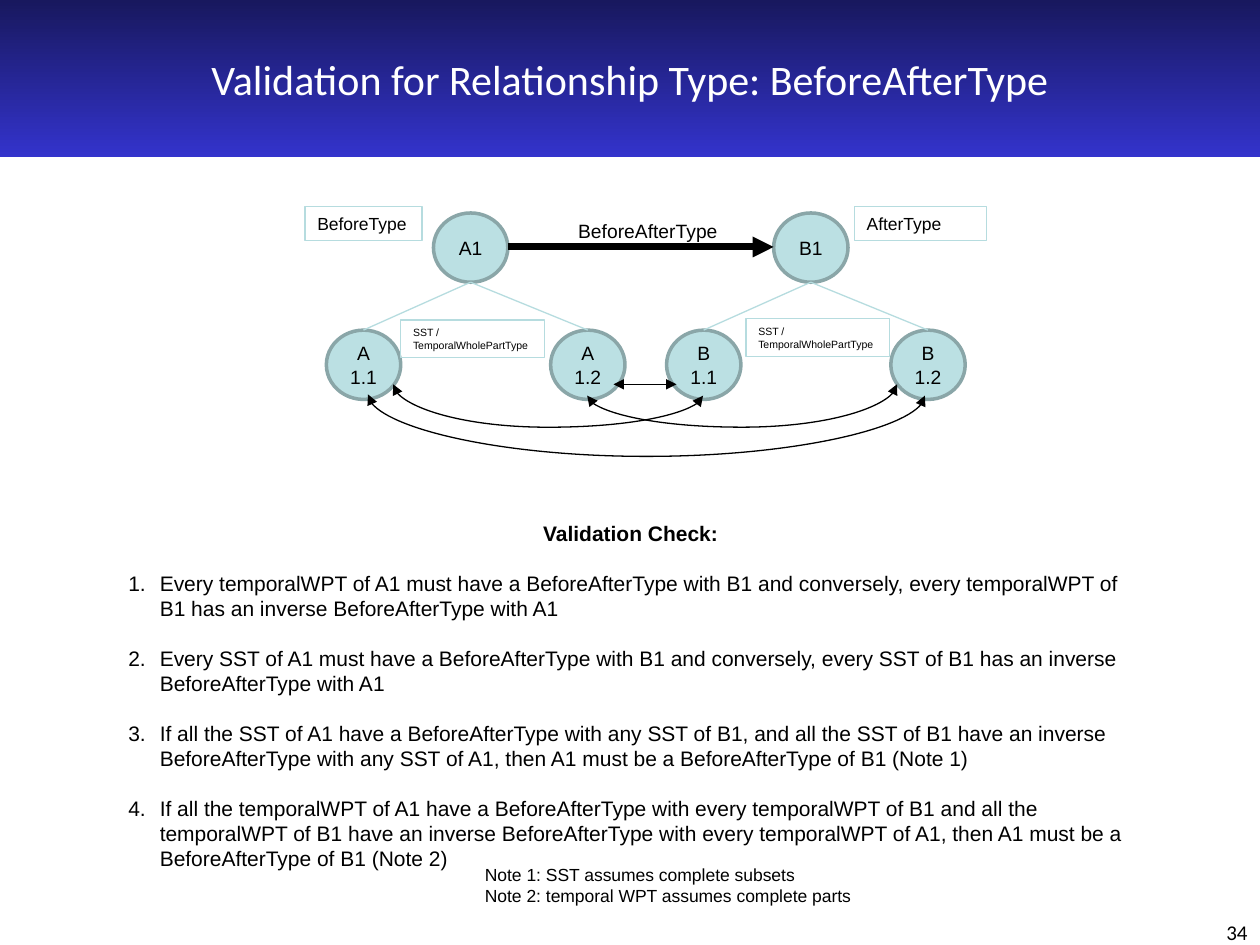
from dataclasses import dataclass

from lxml.etree import SubElement
from pptx import Presentation
from pptx.dml.color import RGBColor
from pptx.enum.shapes import MSO_CONNECTOR, MSO_SHAPE
from pptx.enum.text import MSO_ANCHOR, MSO_AUTO_SIZE, PP_ALIGN
from pptx.oxml.ns import qn
from pptx.util import Emu, Pt

PX = 9144  # 100 px to the inch
NODE_W, NODE_H = 59, 55


@dataclass(frozen=True)
class Theme:
    white: str = "FFFFFF"
    ink: str = "000000"
    band_top: str = "18185E"
    band_bottom: str = "3333CC"
    node: str = "BBE0E3"
    node_line: str = "8AA6A8"
    pale_line: str = "B6DCDF"
    heading_font: str = "Calibri"
    body_font: str = "Arial"
    title: int = 24
    body: int = 12
    node_text: int = 11
    note: int = 10
    tiny: int = 6


def px(value):
    return Emu(round(value * PX))


def rgb(value):
    return RGBColor.from_string(value)


def write(tf, lines, *, size, color, font, bold=False, align=PP_ALIGN.LEFT,
          anchor=MSO_ANCHOR.TOP, wrap=True, inset=None):
    """Fill a text frame with one paragraph per line and return the paragraphs."""
    tf.word_wrap = wrap
    tf.auto_size = MSO_AUTO_SIZE.NONE
    tf.vertical_anchor = anchor
    if inset is not None:
        tf.margin_left = tf.margin_right = tf.margin_top = tf.margin_bottom = px(inset)
    for i, line in enumerate(lines):
        p = tf.paragraphs[0] if i == 0 else tf.add_paragraph()
        p.alignment = align
        r = p.add_run()
        r.text = line
        r.font.size, r.font.name, r.font.bold = Pt(size), font, bold
        r.font.color.rgb = rgb(color)
    return tf.paragraphs


def number(p, indent):
    pPr = p._p.get_or_add_pPr()
    pPr.set("marL", str(px(indent)))
    pPr.set("indent", str(-px(indent)))
    SubElement(pPr, qn("a:buFont"), typeface="+mj-lt")
    SubElement(pPr, qn("a:buAutoNum"), type="arabicPeriod")


class Deck:
    def __init__(self, theme, width, height):
        self.theme = theme
        self.prs = Presentation()
        self.prs.slide_width, self.prs.slide_height = px(width), px(height)
        self.s = None

    def new_slide(self):
        self.s = self.prs.slides.add_slide(self.prs.slide_layouts[5])

    def title(self, text, x, y, w, h):
        t, sp = self.theme, self.s.shapes.title
        sp.left, sp.top, sp.width, sp.height = map(px, (x, y, w, h))
        sp.fill.gradient()
        sp.fill.gradient_angle = 270
        for stop, color in zip(sp.fill.gradient_stops, (t.band_top, t.band_bottom)):
            stop.color.rgb = rgb(color)
        write(sp.text_frame, [text], size=t.title, color=t.white, font=t.heading_font,
              align=PP_ALIGN.CENTER, anchor=MSO_ANCHOR.MIDDLE)

    def text(self, lines, x, y, w, h, **fmt):
        fmt = {"color": self.theme.ink, "font": self.theme.body_font, **fmt}
        sp = self.s.shapes.add_textbox(*map(px, (x, y, w, h)))
        return write(sp.text_frame, lines, **fmt)

    def shape(self, kind, lines, x, y, w, h, fill, line, weight, **fmt):
        sp = self.s.shapes.add_shape(kind, *map(px, (x, y, w, h)))
        sp.shadow.inherit = False
        if fill:
            sp.fill.solid()
            sp.fill.fore_color.rgb = rgb(fill)
        else:
            sp.fill.background()
        sp.line.color.rgb, sp.line.width = rgb(line), Pt(weight)
        write(sp.text_frame, lines, color=self.theme.ink, font=self.theme.body_font, **fmt)
        return sp

    def node(self, lines, x, y):
        t = self.theme
        return self.shape(MSO_SHAPE.OVAL, lines, x, y, NODE_W, NODE_H, t.node, t.node_line, 2,
                          size=t.node_text, align=PP_ALIGN.CENTER,
                          anchor=MSO_ANCHOR.MIDDLE, inset=0)

    def label(self, lines, x, y, w, h, size):
        self.shape(MSO_SHAPE.RECTANGLE, lines, x, y, w, h, None,
                   self.theme.pale_line, 0.75, size=size)

    def line(self, start, end, color, weight=0.75, head=False, tail=False,
             kind=MSO_CONNECTOR.STRAIGHT):
        cx = self.s.shapes.add_connector(kind, *map(px, (*start, *end)))
        cx.line.color.rgb, cx.line.width = rgb(color), Pt(weight)
        ln = cx.line._get_or_add_ln()
        for tag, wanted in (("a:headEnd", head), ("a:tailEnd", tail)):
            if wanted:
                SubElement(ln, qn(tag), type="triangle")
        SubElement(cx._element.spPr, qn("a:effectLst"))
        return cx

    def curve(self, start, end, dip):
        """Draw a two-headed curve from left to right that hangs down to y = dip."""
        (x1, y1), (x2, y2) = start, end
        mid_x, mid_y = (x1 + x2) / 2, (y1 + y2) / 2
        half_w, half_h = abs(y2 - y1) / 2, (x2 - x1) / 2
        falling = y2 > y1
        rise = -half_h if falling else half_h
        cx = self.line((mid_x + half_w, mid_y + rise), (mid_x - half_w, mid_y - rise),
                       self.theme.ink, head=True, tail=True, kind=MSO_CONNECTOR.CURVE)
        spPr = cx._element.spPr
        spPr.find(qn("a:xfrm")).set("rot", str((270 if falling else 90) * 60000))
        bend = round((dip - y1) / (y2 - y1) * 100000)
        guides = spPr.find(qn("a:prstGeom")).find(qn("a:avLst"))
        SubElement(guides, qn("a:gd"), name="adj1", fmla=f"val {bend}")

    def tree(self, letter, x, y):
        """Draw a whole above its two temporal parts."""
        self.node([f"{letter}1"], x, y)
        bottom = (x + NODE_W / 2, y + NODE_H)
        for part, dx in (("1.1", -85), ("1.2", 93)):
            left, top = x + dx, y + 93
            child = self.node([letter, part], left, top)
            link = self.line(bottom, (left + NODE_W / 2, top), self.theme.pale_line)
            link.end_connect(child, 0)


def main():
    t = Theme()
    deck = Deck(t, 1000, 750)
    deck.new_slide()
    deck.title("Validation for Relationship Type: BeforeAfterType", 0, 0, 1000, 125)
    deck.text(["34"], 767, 725, 233, 25, size=t.body, font=t.heading_font,
              align=PP_ALIGN.RIGHT)

    heading, = deck.text(["Validation Check:"], 92, 408, 817, 30, size=t.body, bold=True,
                         align=PP_ALIGN.CENTER)
    checks = deck.text([
        "Every temporalWPT of A1 must have a BeforeAfterType with B1 and conversely, "
        "every temporalWPT of B1 has an inverse BeforeAfterType with A1",
        "Every SST of A1 must have a BeforeAfterType with B1 and conversely, "
        "every SST of B1 has an inverse BeforeAfterType with A1",
        "If all the SST of A1 have a BeforeAfterType with any SST of B1, and all the SST of B1 "
        "have an inverse BeforeAfterType with any SST of A1, then A1 must be a "
        "BeforeAfterType of B1 (Note 1)",
        "If all the temporalWPT of A1 have a BeforeAfterType with every temporalWPT of B1 and "
        "all the temporalWPT of B1 have an inverse BeforeAfterType with every temporalWPT of "
        "A1, then A1 must be a BeforeAfterType of B1 (Note 2)",
    ], 92, 448, 817, 293, size=t.body)
    for i, p in enumerate(checks):
        if i:
            p.space_before = Pt(14)
        number(p, 25)

    for letter, x in (("A", 344), ("B", 614)):
        deck.tree(letter, x, 169)
    deck.line((403, 196), (614, 196), t.ink, 4, tail=True)
    deck.text(["BeforeAfterType"], 449, 169, 132, 29, size=t.node_text, wrap=False)

    deck.label(["BeforeType"], 242, 164, 93, 27, t.note)
    deck.label(["AfterType"], 678, 164, 105, 27, t.note)
    for x, y in ((318, 254), (592, 253)):
        deck.label(["SST /", "TemporalWholePartType"], x, y, 114, 30, t.tiny)

    deck.curve((312, 305), (558, 314), 339)
    deck.curve((466, 314), (712, 305), 339)
    deck.curve((292, 313), (734, 314), 363)
    deck.line((487, 305), (537, 305), t.ink, head=True, tail=True)

    deck.text(["Note 1: SST assumes complete subsets",
               "Note 2: temporal WPT assumes complete parts"],
              375, 681, 333, 44, size=t.note)
    deck.prs.save("out.pptx")


if __name__ == "__main__":
    main()
